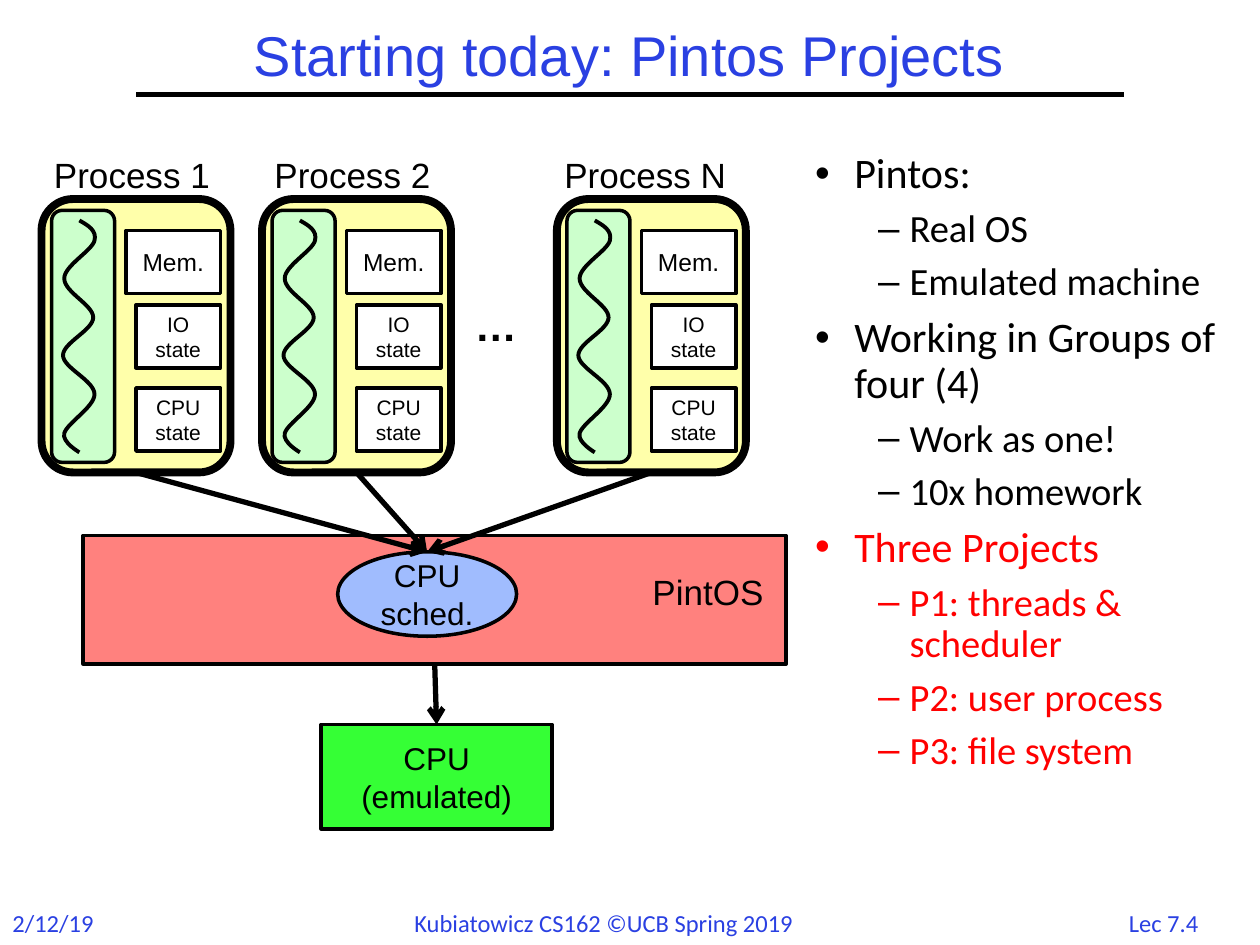
"""Build the slide that introduces the Pintos projects."""
from dataclasses import dataclass
from typing import Any

import lxml.etree
import pptx
import pptx.dml.color
import pptx.enum.shapes
import pptx.enum.text
import pptx.oxml.ns
import pptx.util

Inches = pptx.util.Inches
Pt = pptx.util.Pt
Shape = pptx.enum.shapes.MSO_SHAPE
Align = pptx.enum.text.PP_ALIGN
Anchor = pptx.enum.text.MSO_ANCHOR
AutoSize = pptx.enum.text.MSO_AUTO_SIZE
qn = pptx.oxml.ns.qn

COLORS = {
    "blue": "2A40E2", "black": "000000", "red": "FF0000", "white": "FFFFFF",
    "process": "FFFFAA", "thread": "CCFFCC", "system": "FF817E",
    "scheduler": "A0BCFE", "processor": "35FF35",
}
PROCESS_TOP = 1.58
PROCESS_LEFTS = [4.42, 2.08, 0.33]
WAVE_START = (0.30, 0.17)
WAVE_CURVES = [
    ((0.37, 0.21), (0.44, 0.25), (0.42, 0.33)),
    ((0.40, 0.41), (0.18, 0.53), (0.18, 0.63)),
    ((0.18, 0.74), (0.41, 0.84), (0.41, 0.94)),
    ((0.41, 1.04), (0.17, 1.14), (0.17, 1.24)),
    ((0.17, 1.34), (0.42, 1.44), (0.42, 1.55)),
    ((0.42, 1.65), (0.20, 1.78), (0.18, 1.86)),
    ((0.16, 1.93), (0.30, 2.01), (0.30, 2.01)),
]


@dataclass
class Block:
    left: float
    top: float
    width: float
    height: float
    fill: str
    text: str = ""
    size: float = 18
    kind: Any = Shape.RECTANGLE
    line: float = 2


@dataclass
class Label:
    left: float
    top: float
    width: float
    height: float
    text: str
    size: float = 20
    font: str = "Arial"
    color: str = "black"
    bold: bool = False
    align: Any = Align.LEFT


LABELS = [
    Label(8.78, 7.16, 0.91, 0.33, "Lec 7.4", 14, "Calibri", "blue", align=Align.CENTER),
    Label(0, 7.16, 0.85, 0.34, "2/12/19", 14, "Calibri", "blue"),
    Label(3.19, 7.16, 3.63, 0.34, "Kubiatowicz CS162 ©UCB Spring 2019", 14, "Calibri", "blue"),
    Label(3.67, 2.33, 0.54, 0.5, "…", 24, bold=True),
    Label(0.33, 1.17, 1.45, 0.44, "Process 1"),
    Label(2.08, 1.17, 1.45, 0.44, "Process 2"),
    Label(4.38, 1.17, 1.49, 0.44, "Process N"),
]
PROCESS_PARTS = [
    Block(0, 0, 1.5, 2.17, "process", kind=Shape.ROUNDED_RECTANGLE, line=4.5),
    Block(0.75, 1.5, 0.67, 0.5, "white", "CPU\nstate", 12),
    Block(0.75, 0.84, 0.67, 0.5, "white", "IO\nstate", 12),
    Block(0.67, 0.25, 0.75, 0.5, "white", "Mem.", 14),
    Block(0.08, 0.09, 0.5, 2, "thread", kind=Shape.ROUNDED_RECTANGLE),
]
TOPICS = [
    ("black", "Pintos:", "Real OS", "Emulated machine"),
    ("black", "Working in Groups of four (4)", "Work as one!", "10x homework"),
    ("red", "Three Projects", "P1: threads & scheduler", "P2: user process", "P3: file system"),
]


def rgb(name: str) -> pptx.dml.color.RGBColor:
    return pptx.dml.color.RGBColor.from_string(COLORS[name])


def style(para: Any, font: str, size: float, color: str, align: Any = None) -> None:
    para.alignment = align
    para.font.name, para.font.size = font, Pt(size)
    para.font.color.rgb = rgb(color)


def outline(shape: Any, width: float) -> None:
    shape.line.color.rgb = rgb("black")
    shape.line.width = Pt(width)


def add_block(shapes: Any, block: Block, left: float = 0, top: float = 0) -> Any:
    shape = shapes.add_shape(block.kind, Inches(left + block.left), Inches(top + block.top),
                             Inches(block.width), Inches(block.height))
    shape.shadow.inherit = False
    shape.fill.solid()
    shape.fill.fore_color.rgb = rgb(block.fill)
    outline(shape, block.line)
    if block.text:
        shape.text_frame.text = block.text
        shape.text_frame.vertical_anchor = Anchor.MIDDLE
        for para in shape.text_frame.paragraphs:
            style(para, "Arial", block.size, "black", Align.CENTER)
    return shape


def add_label(shapes: Any, label: Label) -> None:
    box = shapes.add_textbox(*map(Inches, (label.left, label.top, label.width, label.height)))
    box.text_frame.word_wrap = False
    box.text_frame.auto_size = AutoSize.SHAPE_TO_FIT_TEXT
    box.text_frame.text = label.text
    para = box.text_frame.paragraphs[0]
    style(para, label.font, label.size, label.color, label.align)
    para.font.bold = label.bold


def add_wave(shapes: Any, left: float) -> None:
    def spot(point: tuple[float, float]) -> tuple[int, int]:
        return Inches(left + point[0]), Inches(PROCESS_TOP + point[1])

    builder = shapes.build_freeform(*spot(WAVE_START))
    builder.add_line_segments([spot(curve[-1]) for curve in WAVE_CURVES], close=False)
    wave = builder.convert_to_shape()
    wave.shadow.inherit = False
    wave.fill.background()
    outline(wave, 2.25)
    for segment, curve in zip(list(wave._element.iter(qn("a:lnTo"))), WAVE_CURVES):
        bezier = lxml.etree.Element(qn("a:cubicBezTo"))
        for x, y in map(spot, curve):
            lxml.etree.SubElement(bezier, qn("a:pt"), x=str(x - wave.left), y=str(y - wave.top))
        segment.getparent().replace(segment, bezier)


def add_process(shapes: Any, left: float) -> Any:
    group = shapes.add_group_shape().shapes
    body, *_ = [add_block(group, part, left, PROCESS_TOP) for part in PROCESS_PARTS]
    add_wave(group, left)
    return body


def add_line(shapes: Any, *ends: float) -> Any:
    line = shapes.add_connector(pptx.enum.shapes.MSO_CONNECTOR.STRAIGHT, *map(Inches, ends))
    outline(line, 3)
    lxml.etree.SubElement(line._element.spPr, qn("a:effectLst"))
    return line


def add_arrow(shapes: Any, target: Any) -> Any:
    arrow = add_line(shapes, 0, 0, 1, 1)
    arrow.end_connect(target, 0)
    lxml.etree.SubElement(arrow.line._get_or_add_ln(), qn("a:tailEnd"), type="arrow")
    return arrow


def add_item(para: Any, text: str, level: int, color: str) -> None:
    para.text, para.level, para.line_spacing = text, level, 0.9
    margin, indent, size = ((0.31, -0.31, 24), (0.75, -0.25, 22))[level]
    properties = para._p.get_or_add_pPr()
    properties.set("marL", str(Inches(margin)))
    properties.set("indent", str(Inches(indent)))
    before = lxml.etree.SubElement(properties, qn("a:spcBef"))
    lxml.etree.SubElement(before, qn("a:spcPct"), val="30000")
    style(para, "Calibri", size, color)


def fill_placeholders(title: Any, body: Any) -> None:
    for shape, area in ((title, (1.08, 0.17, 7.83, 0.58)), (body, (6.37, 1.16, 3.51, 5.7))):
        shape.left, shape.top, shape.width, shape.height = map(Inches, area)
        shape.text_frame.auto_size = AutoSize.NONE
    title.text_frame.text = "Starting today: Pintos Projects"
    title.text_frame.vertical_anchor = Anchor.MIDDLE
    title.text_frame.paragraphs[0].line_spacing = 0.9
    style(title.text_frame.paragraphs[0], "Arial", 32, "blue", Align.CENTER)
    frame = body.text_frame
    items = [(text, min(index, 1), color) for color, *texts in TOPICS for index, text in enumerate(texts)]
    for index, item in enumerate(items):
        add_item(frame.add_paragraph() if index else frame.paragraphs[0], *item)


def main() -> None:
    deck = pptx.Presentation()
    deck.slide_width, deck.slide_height = Inches(10), Inches(7.5)
    page = deck.slides.add_slide(deck.slide_layouts[1])
    shapes = page.shapes
    fill_placeholders(shapes.title, page.placeholders[1])
    add_line(shapes, 1.08, 0.75, 8.92, 0.75)
    for label in LABELS:
        add_label(shapes, label)
    system = add_block(shapes, Block(0.66, 4.25, 5.58, 1.02, "system"))
    scheduler = add_block(shapes, Block(2.68, 4.38, 1.42, 0.67, "scheduler", "CPU sched.", kind=Shape.OVAL))
    add_label(shapes, Label(5.08, 4.48, 1.09, 0.44, "PintOS"))
    processor = add_block(shapes, Block(2.55, 5.75, 1.83, 0.83, "processor", "CPU\n(emulated)"))
    add_arrow(shapes, processor).begin_connect(system, 2)
    arrows = [add_arrow(shapes, scheduler) for _ in PROCESS_LEFTS]
    for arrow, left in zip(arrows, PROCESS_LEFTS):
        arrow.begin_connect(add_process(shapes, left), 2)
    deck.save("out.pptx")


if __name__ == "__main__":
    main()
